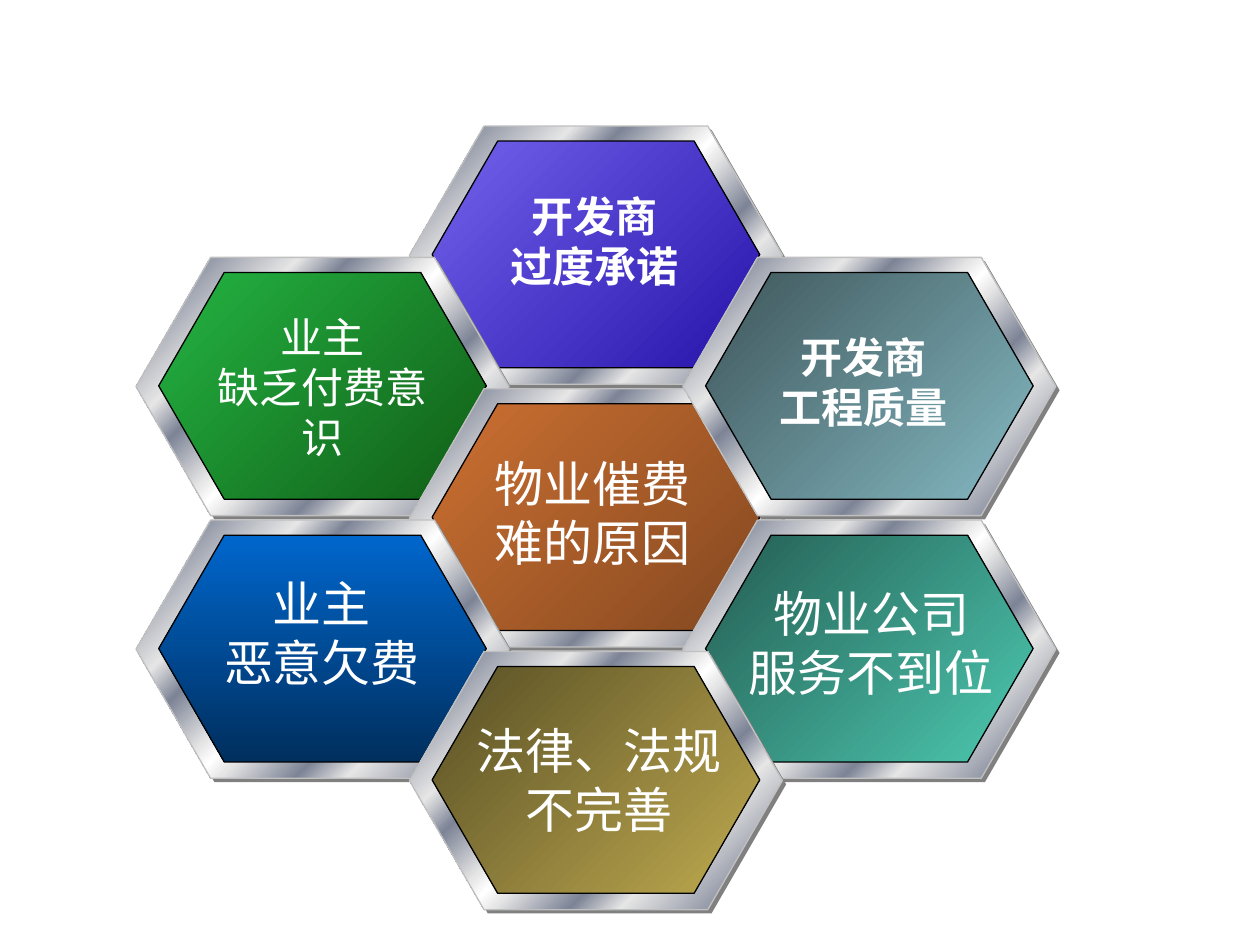
from lxml import etree
from pptx import Presentation
from pptx.dml.color import RGBColor
from pptx.enum import shapes, text
from pptx.oxml import ns
from pptx.util import Inches, Pt

FONT = "Noto Sans CJK SC"
WHITE = RGBColor(0xFF, 0xFF, 0xFF)
BLACK = RGBColor(0x00, 0x00, 0x00)
SHADE = RGBColor(0x80, 0x80, 0x80)
SILVER = RGBColor(0xC0, 0xC0, 0xC0)
LIGHT = RGBColor(0xE6, 0xE6, 0xE6)
STEEL = RGBColor(0x7D, 0x84, 0x96)
METAL = [(0, LIGHT), (8, STEEL), (26, LIGHT), (34, STEEL), (46, LIGHT), (50, WHITE),
         (54, LIGHT), (66, STEEL), (74, LIGHT), (92, STEEL), (100, LIGHT)]

LEFT, TOP = 1.08, 1
COLUMN_STEP, ROW_STEP = 2.17, 4.17 / 4
RIM_SIZE, FACE_SIZE = (2.96, 2.05), (2.6, 1.8)

# column, half row, gradient start and end, angle, lines, size, bold, wrap, text box
CELLS = [
    (1, 0, "7262EC", "2614AA", 45, ["开发商", "过度承诺"], 24, True, True,
     (3.77, 1.46, 1.89, 0.91)),
    (0, 1, "24B443", "115D16", 45, ["业主", "缺乏付费意识"], 24, False, True,
     (1.58, 2.42, 1.96, 1.31)),
    (1, 2, "CC7032", "844820", 45, ["物业催费难的原因"], 28, False, True,
     (3.73, 3.55, 1.94, 1.04)),
    (2, 1, "3E565A", "85B9C3", 45, ["开发商", "工程质量"], 24, True, False,
     (6.08, 2.58, 1.55, 0.91)),
    (2, 3, "245D52", "4DC9B1", 45, ["物业公司", "服务不到位"], 28, False, False,
     (5.83, 4.58, 2.17, 1.04)),
    (0, 3, "0066CC", "002F5E", 90, ["业主", "恶意欠费"], 28, False, False,
     (1.67, 4.5, 1.77, 1.05)),
    (1, 4, "584F25", "BFAA4F", 45, ["法律、法规", "不完善"], 28, False, False,
     (3.67, 5.67, 2.17, 1.05)),
]


def add_hexagon(group, x, y, size, line_color=None):
    hexagon = group.shapes.add_shape(shapes.MSO_SHAPE.HEXAGON, Inches(x), Inches(y),
                                     Inches(size[0]), Inches(size[1]))
    hexagon.adjustments[0] = 0.289
    hexagon.shadow.inherit = False
    if line_color is None:
        hexagon.line.fill.background()
    else:
        hexagon.line.color.rgb = line_color
        hexagon.line.width = Pt(0.75)
    return hexagon


def fill_gradient(shape, stops, angle):
    """Fill with (percent, colour) stops; the angle runs clockwise."""
    shape.fill.gradient()
    gradient = shape.element.spPr.find(ns.qn("a:gradFill"))
    stop_list = gradient.find(ns.qn("a:gsLst"))
    for old_stop in list(stop_list):
        stop_list.remove(old_stop)
    for percent, color in stops:
        stop = etree.SubElement(stop_list, ns.qn("a:gs"), pos=str(percent * 1000))
        etree.SubElement(stop, ns.qn("a:srgbClr"), val=str(color))
    gradient.find(ns.qn("a:lin")).set("ang", str(angle * 60000))


deck = Presentation()
deck.slide_width, deck.slide_height = Inches(10), Inches(7.5)
page = deck.slides.add_slide(deck.slide_layouts[6])

for column, row, start, end, angle, lines, size, bold, wrap, place in CELLS:
    x, y = LEFT + column * COLUMN_STEP, TOP + row * ROW_STEP
    cell = page.shapes.add_group_shape()

    shade = add_hexagon(cell, x + 0.03, y + 0.03, RIM_SIZE)
    shade.fill.solid()
    shade.fill.fore_color.rgb = SHADE

    rim = add_hexagon(cell, x, y, RIM_SIZE, SILVER)
    fill_gradient(rim, METAL, 45)

    face = add_hexagon(cell, x + 0.18, y + 0.12, FACE_SIZE, BLACK)
    colors = [RGBColor.from_string(start), RGBColor.from_string(end)]
    fill_gradient(face, zip((0, 100), colors), angle)

    box = cell.shapes.add_textbox(*map(Inches, place))
    frame = box.text_frame
    frame.word_wrap = wrap
    frame.auto_size = text.MSO_AUTO_SIZE.SHAPE_TO_FIT_TEXT
    frame.text = "\n".join(lines)
    for para in frame.paragraphs:
        para.alignment = text.PP_ALIGN.CENTER
        span = para.runs[0]
        for name, value in {"name": FONT, "size": Pt(size), "bold": bold}.items():
            setattr(span.font, name, value)
        span.font.color.rgb = WHITE
        etree.SubElement(span.font._element, ns.qn("a:ea"), typeface=FONT)

deck.save("out.pptx")
